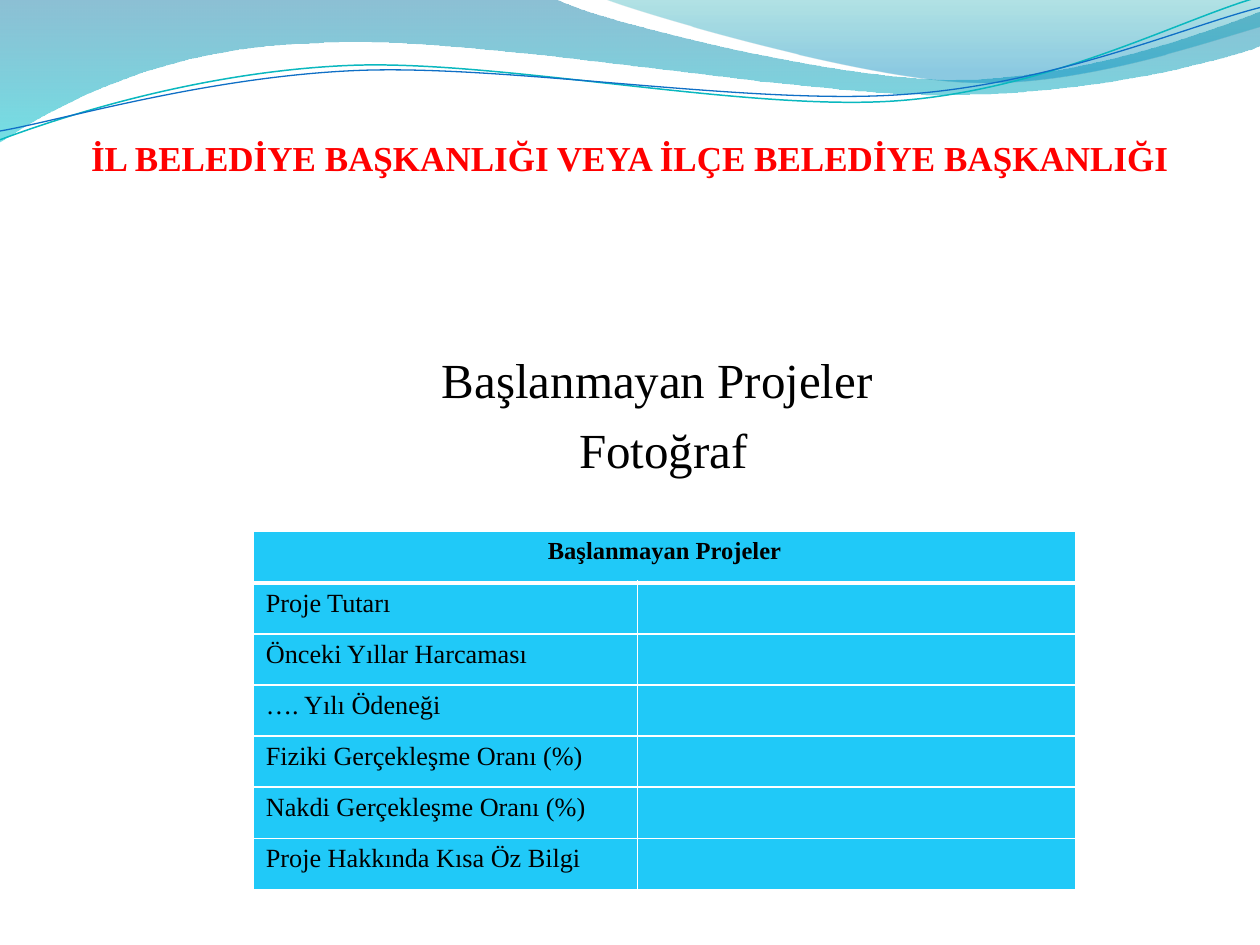
from dataclasses import dataclass
from typing import Optional

from lxml.etree import SubElement
from pptx import Presentation
from pptx.dml.color import RGBColor
from pptx.enum.text import MSO_ANCHOR as Anchor, MSO_AUTO_SIZE as AutoSize, PP_ALIGN as Align
from pptx.oxml import parse_xml
from pptx.oxml.ns import nsdecls, qn
from pptx.util import Emu, Inches, Pt

COLORS = {
    "title": "FF0000",
    "text": "000000",
    "cell": "20C9F8",
    "border": "FFFFFF",
    "deep_blue": "0074A1",
    "turquoise": "00C6CF",
    "sea_green": "00A1A9",
    "sky_blue": "008BBF",
    "teal_line": "0AB8BF",
    "blue_line": "0F6FC6",
}
FONT = "Times New Roman"
COLUMNS, ROWS = 10, 7.5


@dataclass(frozen=True)
class Box:
    left: float
    top: float
    width: float
    height: float

    def place(self) -> tuple:
        return tuple(Inches(v) for v in (self.left, self.top, self.width, self.height))


@dataclass(frozen=True)
class Stop:
    position: int
    color: str
    opacity: int


@dataclass(frozen=True)
class Wave:
    start: tuple
    segments: tuple
    stops: tuple = ()
    line: Optional[str] = None
    weight: float = 0


WAVES = (
    Wave((0, 0), (
        (4.4, -0.01),
        (4.76, 0.17, 6.64, 0.63, 7.58, 0.63),
        (8.53, 0.63, 9.58, 0.26, 10, 0.09),
        (10.01, 0.36),
        (9.83, 0.44, 8.7, 0.76, 7.46, 0.75),
        (6.22, 0.75, 3.82, 0.28, 2.57, 0.34),
        (1.29, 0.36, 0.46, 0.83, -0.01, 1.13),
    ), stops=(Stop(0, "deep_blue", 45), Stop(100, "turquoise", 55))),
    Wave((4.79, -0.01), (
        (5.09, 0.11, 6.82, 0.62, 7.69, 0.65),
        (8.56, 0.69, 9.61, 0.32, 10, 0.21),
        (10, 0),
    ), stops=(Stop(0, "sea_green", 30), Stop(80, "sky_blue", 45))),
    Wave((0, 1.11), (
        (0.48, 0.93, 1.58, 0.57, 2.77, 0.52),
        (3.95, 0.47, 5.93, 0.89, 7.13, 0.8),
        (8.33, 0.71, 9.38, 0.15, 9.98, -0.02),
    ), line="teal_line", weight=0.85),
    Wave((0, 1.04), (
        (0.47, 0.96, 1.64, 0.61, 2.83, 0.56),
        (4.03, 0.51, 5.97, 0.84, 7.17, 0.75),
        (8.36, 0.67, 9.41, 0.21, 10, 0.06),
    ), line="blue_line", weight=0.75),
)

TITLE = "İL BELEDİYE BAŞKANLIĞI VEYA İLÇE BELEDİYE BAŞKANLIĞI"
TITLE_BOX = Box(0, 0.91, COLUMNS, 0.63)
CAPTIONS = ("Başlanmayan Projeler ", "Fotoğraf")
CAPTION_BOX = Box(2, 2.18, 6.53, 2.65)
TABLE_HEADING = "Başlanmayan Projeler"
TABLE_LABELS = (
    "Proje Tutarı",
    "Önceki Yıllar Harcaması",
    "…. Yılı Ödeneği",
    "Fiziki Gerçekleşme Oranı (%)",
    "Nakdi Gerçekleşme Oranı (%)",
    "Proje Hakkında Kısa Öz Bilgi",
)
TABLE_BOX = Box(2.01, 4.22, 6.53, 2.84)
TABLE_COLUMNS = (3.05, 3.48)


def rgb(name: str) -> RGBColor:
    return RGBColor.from_string(COLORS[name])


def style(paragraph, size: float, color: str = "text", bold: bool = False, align=Align.LEFT) -> None:
    paragraph.alignment = align
    font = paragraph.font
    font.name, font.size, font.bold = FONT, Pt(size), bold
    font.color.rgb = rgb(color)


def gradient(stops: tuple):
    stop_xml = "".join(
        f'<a:gs pos="{s.position * 1000}"><a:srgbClr val="{COLORS[s.color]}">'
        f'<a:alpha val="{s.opacity * 1000}"/></a:srgbClr></a:gs>'
        for s in stops
    )
    return parse_xml(
        f'<a:gradFill {nsdecls("a")} rotWithShape="1"><a:gsLst>{stop_xml}</a:gsLst>'
        '<a:lin ang="5400000" scaled="1"/></a:gradFill>'
    )


def bend(shape, segments: tuple) -> None:
    steps = iter(list(shape.element.iter(qn("a:lnTo"))))
    for segment in segments:
        first = next(steps)
        if len(segment) == 6:
            curve = parse_xml(f'<a:cubicBezTo {nsdecls("a")}/>')
            first.addprevious(curve)
            for step in (first, next(steps), next(steps)):
                curve.append(step[0])
                step.getparent().remove(step)


def draw_wave(slide, wave: Wave) -> None:
    builder = slide.shapes.build_freeform(*map(Inches, wave.start), scale=1.0)
    points = [
        (Inches(x), Inches(y))
        for segment in wave.segments
        for x, y in zip(segment[::2], segment[1::2])
    ]
    builder.add_line_segments(points, close=bool(wave.stops))
    shape = builder.convert_to_shape()
    bend(shape, wave.segments)
    shape.shadow.inherit = False
    shape.fill.background()
    if wave.line:
        shape.line.color.rgb = rgb(wave.line)
        shape.line.width = Pt(wave.weight)
    else:
        shape.line.fill.background()
        properties = shape.element.spPr
        properties.replace(properties.find(qn("a:noFill")), gradient(wave.stops))


def draw_title(slide) -> None:
    title = slide.shapes.title
    title.left, title.top, title.width, title.height = TITLE_BOX.place()
    frame = title.text_frame
    frame.text = TITLE
    frame.auto_size, frame.vertical_anchor = AutoSize.NONE, Anchor.MIDDLE
    frame.margin_left = frame.margin_right = frame.margin_bottom = 0
    frame.margin_top = Inches(0.05)
    style(frame.paragraphs[0], 20, "title", True, Align.CENTER)


def draw_captions(slide) -> None:
    frame = slide.shapes.add_textbox(*CAPTION_BOX.place()).text_frame
    frame.word_wrap, frame.vertical_anchor = True, Anchor.MIDDLE
    frame.margin_bottom = Inches(0.49)
    frame.text = "\n".join(CAPTIONS)
    for paragraph in frame.paragraphs:
        style(paragraph, 28, align=Align.CENTER)
        paragraph.space_before = Pt(6)


def format_cell(cell, top: float, bottom: float) -> None:
    properties = cell._tc.get_or_add_tcPr()
    for side, weight in (("L", 1), ("R", 1), ("T", top), ("B", bottom)):
        border = SubElement(properties, qn(f"a:ln{side}"), w=str(Pt(weight)))
        SubElement(SubElement(border, qn("a:solidFill")), qn("a:srgbClr"), val=COLORS["border"])
    cell.fill.solid()
    cell.fill.fore_color.rgb = rgb("cell")


def draw_table(slide) -> None:
    texts = (TABLE_HEADING, *TABLE_LABELS)
    table = slide.shapes.add_table(len(texts), len(TABLE_COLUMNS), *TABLE_BOX.place()).table
    for column, width in zip(table.columns, TABLE_COLUMNS):
        column.width = Inches(width)
    for index, text in enumerate(texts):
        heading = index == 0
        table.rows[index].height = Emu(Inches(TABLE_BOX.height) // len(texts))
        table.cell(index, 0).text = text
        for column in range(len(TABLE_COLUMNS)):
            cell = table.cell(index, column)
            format_cell(cell, 3 if index == 1 else 1, 3 if heading else 1)
            style(cell.text_frame.paragraphs[0], 14 if heading else 15,
                  bold=heading, align=Align.CENTER if heading else Align.LEFT)
    table.cell(0, 0).merge(table.cell(0, len(TABLE_COLUMNS) - 1))


def main() -> None:
    deck = Presentation()
    deck.slide_width, deck.slide_height = Inches(COLUMNS), Inches(ROWS)
    slide = deck.slides.add_slide(deck.slide_layouts[5])
    for wave in WAVES:
        draw_wave(slide, wave)
    draw_title(slide)
    draw_table(slide)
    draw_captions(slide)
    deck.save("out.pptx")


if __name__ == "__main__":
    main()
